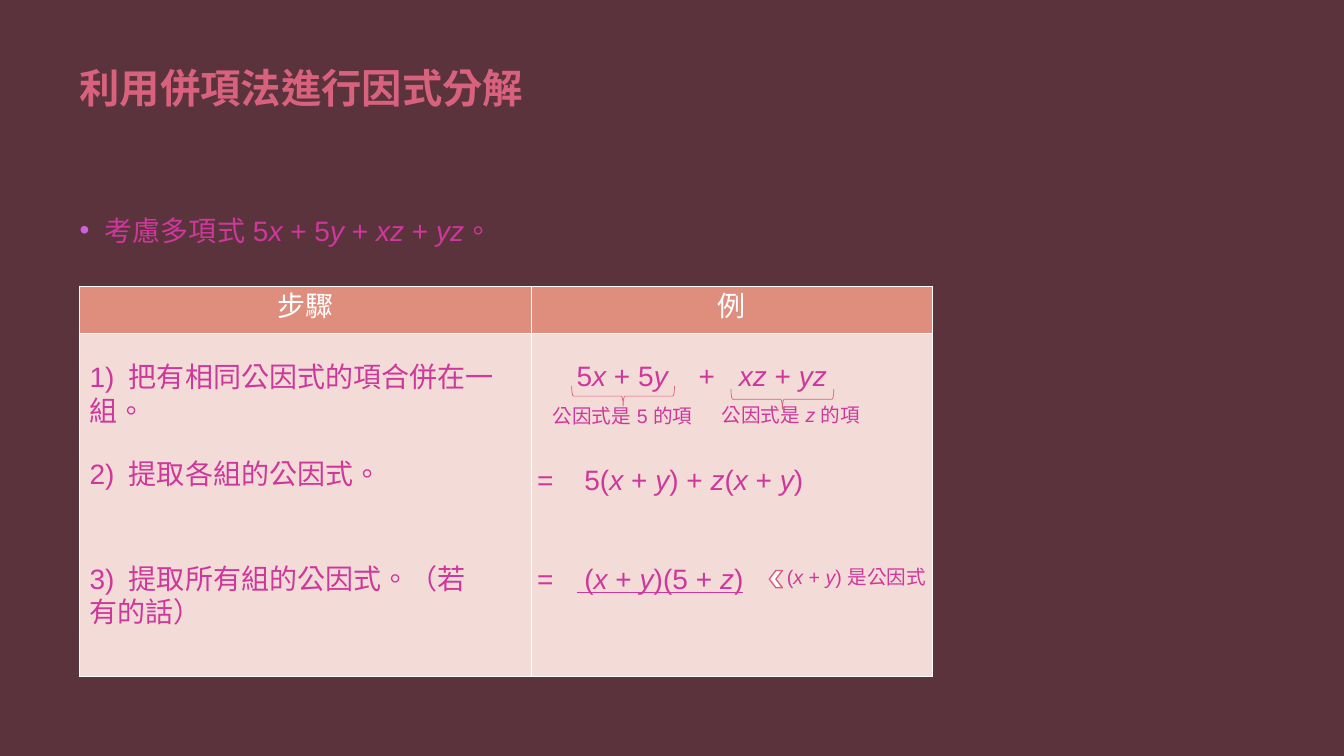
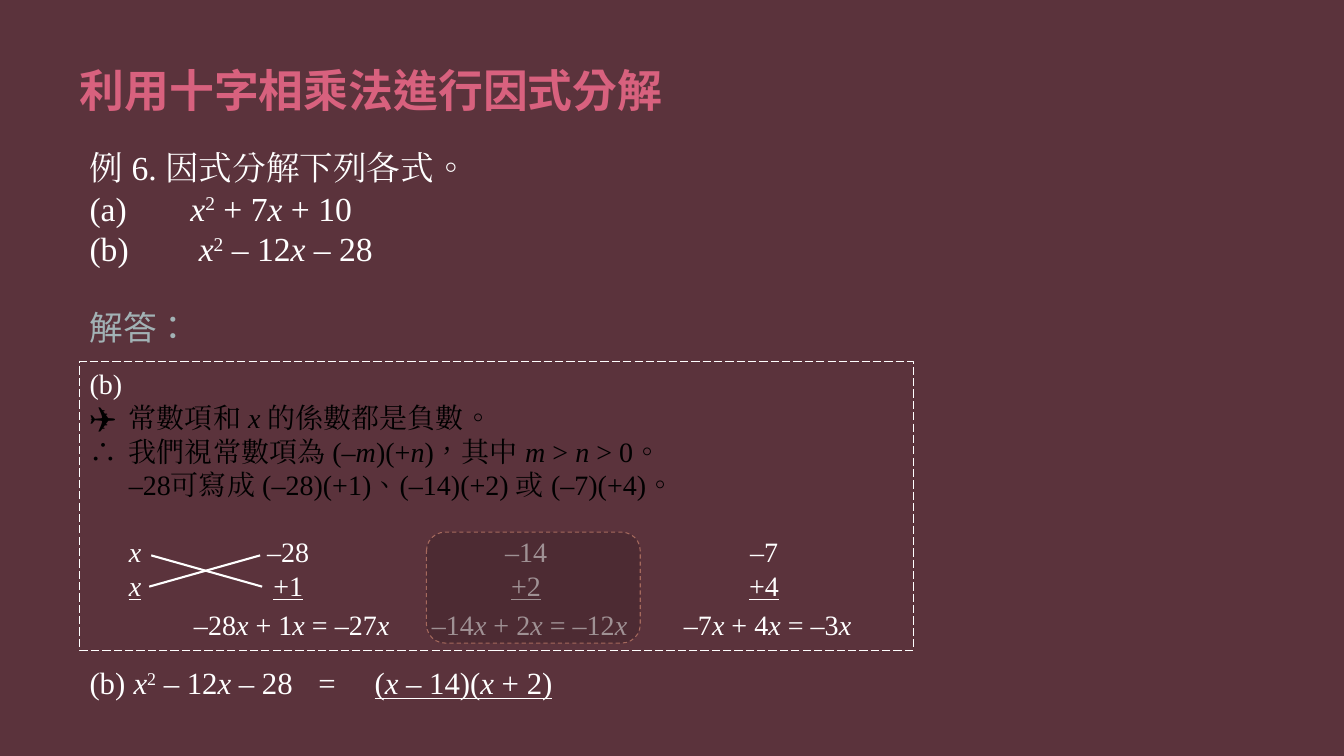
import dataclasses
import itertools

import pptx
import pptx.dml.color
import pptx.enum.dml
import pptx.enum.shapes
import pptx.enum.text
import pptx.oxml
import pptx.oxml.ns
import pptx.util

Inches = pptx.util.Inches
Pt = pptx.util.Pt
RGB = pptx.dml.color.RGBColor.from_string
Align = pptx.enum.text.PP_ALIGN
Anchor = pptx.enum.text.MSO_ANCHOR
Shape = pptx.enum.shapes.MSO_SHAPE
Dash = pptx.enum.dml.MSO_LINE
qn = pptx.oxml.ns.qn


@dataclasses.dataclass(frozen=True)
class Theme:
    background: str = "5B333C"
    dark: str = "41242B"
    rose: str = "D8617E"
    bullet: str = "CE61D8"
    magenta: str = "CE389B"
    white: str = "FFFFFF"
    black: str = "000000"
    gray: str = "A2B2B5"
    header: str = "DF8E7E"
    cell: str = "F3DBD8"
    highlight: str = "A5695D"
    heading_font: str = "Noto Sans CJK TC"
    sans: str = "Arial"
    serif: str = "Times New Roman"
    label_font: str = "Lato"
    note: float = 14
    body: float = 20
    answer: float = 22
    question: float = 24


theme = Theme()
left = 0.79


def write(paragraph, text, size, color, font, underline=False, tabs=()):
    if tabs:
        tab_list = pptx.oxml.ns.qn("a:tabLst")
        properties = paragraph._p.get_or_add_pPr()
        stops = properties.makeelement(tab_list, {})
        properties.append(stops)
        for position, alignment in tabs:
            stop = stops.makeelement(qn("a:tab"), {"pos": str(Inches(position)), "algn": alignment})
            stops.append(stop)
    kinds = {"x": "variable", "y": "variable", "z": "variable", "m": "variable", "n": "variable", "²": "power"}
    for kind, letters in itertools.groupby(text, lambda letter: kinds.get(letter, "plain")):
        run = paragraph.add_run()
        run.text = "2" if kind == "power" else "".join(letters)
        run.font.size = Pt(size)
        run.font.color.rgb = RGB(color)
        run.font.name = font
        run.font.italic = kind == "variable"
        run.font.underline = underline
        properties = run._r.get_or_add_rPr()
        properties.set("lang", "zh-TW")
        properties.append(properties.makeelement(qn("a:ea"), {"typeface": font}))
        if kind == "power":
            properties.set("baseline", "30000")


def add_box(slide, box, wrap=True):
    frame = slide.shapes.add_textbox(*map(Inches, box)).text_frame
    frame.word_wrap = wrap
    return frame


presentation = pptx.Presentation()
presentation.slide_width = Inches(13.33)
presentation.slide_height = Inches(7.5)
master_fill = presentation.slide_master.background.fill
master_fill.solid()
master_fill.fore_color.rgb = RGB(theme.background)

slides = []
for title_text, title_size in [("利用併項法進行因式分解", 28.8), ("利用十字相乘法進行因式分解", 32)]:
    slide = presentation.slides.add_slide(presentation.slide_layouts[5])
    title = slide.shapes.title
    title.left, title.top, title.width, title.height = map(Inches, (left, 0.68, 11.73, 0.73))
    frame = title.text_frame
    frame.margin_left = frame.margin_top = frame.margin_right = frame.margin_bottom = 0
    frame.vertical_anchor = Anchor.TOP
    frame.word_wrap = True
    paragraph = frame.paragraphs[0]
    paragraph.alignment = Align.LEFT
    paragraph.line_spacing = 0.9
    write(paragraph, title_text, title_size, theme.rose, theme.heading_font)
    for run in paragraph.runs:
        run.font.bold = True
    slides.append(slide)
grouping, cross = slides

frame = add_box(grouping, (left, 2.05, 11.73, 0.5))
frame.margin_left = frame.margin_top = frame.margin_right = frame.margin_bottom = 0
paragraph = frame.paragraphs[0]
properties = paragraph._p.get_or_add_pPr()
properties.set("marL", str(Inches(0.25)))
properties.set("indent", str(Inches(-0.25)))
namespace = pptx.oxml.ns.nsdecls("a")
for bullet in (
    f'<a:buClr {namespace}><a:srgbClr val="{theme.bullet}"/></a:buClr>',
    f'<a:buFont {namespace} typeface="{theme.sans}"/>',
    f'<a:buChar {namespace} char="•"/>',
):
    properties.append(pptx.oxml.parse_xml(bullet))
paragraph.line_spacing = 1.2
write(paragraph, "考慮多項式 5x + 5y + xz + yz。", theme.body, theme.magenta, theme.sans)

table = grouping.shapes.add_table(2, 2, *map(Inches, (left, 2.84, 8.46, 3.87))).table
table.first_row = False
table.horz_banding = False
for column, width in zip(table.columns, (4.48, 3.98)):
    column.width = Inches(width)
for row, height, fill in zip(table.rows, (0.47, 3.4), (theme.header, theme.cell)):
    row.height = Inches(height)
    for cell in row.cells:
        for side in ("lnL", "lnR", "lnT", "lnB"):
            cell._tc.get_or_add_tcPr().append(pptx.oxml.parse_xml(
                f'<a:{side} {namespace} w="{Pt(1)}"><a:solidFill>'
                f'<a:srgbClr val="{theme.white}"/></a:solidFill></a:{side}>'))
        cell.fill.solid()
        cell.fill.fore_color.rgb = RGB(fill)
for cell, heading in zip(table.rows[0].cells, ("步驟", "例")):
    paragraph = cell.text_frame.paragraphs[0]
    paragraph.alignment = Align.CENTER
    write(paragraph, heading, theme.body, theme.white, theme.sans)

step_tabs = [(0.39, "l")]
sum_tabs = step_tabs + [(1.6, "l"), (2, "l")]
working = [
    ((left, 3.52, 4.45, 0.77), "1)\t把有相同公因式的項合併在一組。", "", step_tabs),
    ((left, 4.48, 4.02, 0.44), "2)\t提取各組的公因式。", "", step_tabs),
    ((left, 5.52, 4.02, 0.77), "3)\t提取所有組的公因式。（若有的話）", "", step_tabs),
    ((5.23, 3.51, 3.08, 0.44), "\t5x + 5y\t+\txz + yz", "", sum_tabs),
    ((5.23, 4.54, 3.37, 0.44), "=\t 5(x + y) + z(x + y)", "", step_tabs),
    ((5.23, 5.52, 2.59, 0.44), "=\t", " (x + y)(5 + z)", step_tabs),
]
for box, text, result, tabs in working:
    paragraph = add_box(grouping, box).paragraphs[0]
    write(paragraph, text, theme.body, theme.magenta, theme.sans, tabs=tabs)
    write(paragraph, result, theme.body, theme.magenta, theme.sans, underline=True)

notes = [
    ((5.34, 3.96, 1.67, 0.34), "公因式是 5 的項"),
    ((7.01, 3.95, 1.67, 0.34), "公因式是 z 的項"),
    ((7.66, 5.56, 1.67, 0.34), "(x + y) 是公因式"),
]
for box, text in notes:
    paragraph = add_box(grouping, box).paragraphs[0]
    paragraph.alignment = Align.CENTER
    write(paragraph, text, theme.note, theme.magenta, theme.sans)

marks = [
    (Shape.LEFT_BRACE, (6.08, 3.42, 0.2, 1.02), 270, 0.5),
    (Shape.LEFT_BRACE, (7.66, 3.45, 0.2, 1.02), 270, 0.5),
    (Shape.CHEVRON, (7.63, 5.66, 0.13, 0.17), 180, 1),
]
for preset, box, rotation, line_width in marks:
    mark = grouping.shapes.add_shape(preset, *map(Inches, box))
    mark.shadow.inherit = False
    mark.rotation = rotation
    mark.line.color.rgb = RGB(theme.rose)
    mark.line.width = Pt(line_width)
    if preset == Shape.CHEVRON:
        mark.fill.solid()
        mark.fill.fore_color.rgb = RGB(theme.white)
    else:
        mark.fill.background()

frame = add_box(cross, (left, 1.41, 6.67, 1.31))
for index, text in enumerate(("例 6. 因式分解下列各式。", "(a)\tx² + 7x + 10", "(b)\t x² – 12x – 28")):
    paragraph = frame.add_paragraph() if index else frame.paragraphs[0]
    write(paragraph, text, theme.question, theme.white, theme.serif, tabs=[(1, "l")])

paragraph = add_box(cross, (left, 3, 1.3, 0.5), wrap=False).paragraphs[0]
write(paragraph, "解答：", theme.question, theme.gray, theme.label_font)

paragraph = add_box(cross, (left, 6.54, 5.5, 0.5)).paragraphs[0]
answer_tabs = [(0.36, "l"), (2.27, "l"), (2.75, "l")]
write(paragraph, "(b)\t x² – 12x – 28\t=\t ", theme.answer, theme.white, theme.serif, tabs=answer_tabs)
write(paragraph, "(x – 14)(x + 2)", theme.answer, theme.white, theme.serif, underline=True)

panel = cross.shapes.add_shape(Shape.RECTANGLE, *map(Inches, (left, 3.59, 8.27, 2.86)))
panel.shadow.inherit = False
panel.fill.background()
panel.line.color.rgb = RGB(theme.white)
panel.line.width = Pt(0.75)
panel.line.dash_style = Dash.LONG_DASH
frame = panel.text_frame
frame.word_wrap = True
frame.vertical_anchor = Anchor.TOP
panel_tabs = [(0.39, "l"), (1.97, "ctr"), (4.33, "ctr"), (6.69, "ctr")]
panel_lines = [
    ("(b)", theme.white, False, 0),
    ("✈\t常數項和 x 的係數都是負數。", theme.black, False, 0),
    ("∴\t我們視常數項為 (–m)(+n)，其中 m > n > 0。", theme.black, False, 0),
    ("\t–28可寫成 (–28)(+1)、(–14)(+2) 或 (–7)(+4)。", theme.black, False, 0),
    ("\tx\t–28\t–14\t–7", theme.white, False, 24),
    ("\tx\t+1\t+2\t+4", theme.white, True, 0),
    ("\t\t –28x + 1x = –27x\t –14x + 2x = –12x\t –7x + 4x = –3x", theme.white, False, 4),
]
for index, (text, color, underline, gap) in enumerate(panel_lines):
    paragraph = frame.add_paragraph() if index else frame.paragraphs[0]
    paragraph.alignment = Align.LEFT
    if gap:
        paragraph.space_before = Pt(gap)
    for position, part in enumerate(text.split("\t")):
        if position:
            write(paragraph, "\t", theme.body, color, theme.serif)
        write(paragraph, part, theme.body, color, theme.serif, underline, () if position else panel_tabs)

highlight = cross.shapes.add_shape(Shape.ROUNDED_RECTANGLE, *map(Inches, (4.23, 5.28, 2.12, 1.1)))
highlight.shadow.inherit = False
highlight.fill.solid()
highlight.fill.fore_color.rgb = RGB(theme.dark)
fill_color = highlight._element.spPr.find(qn("a:solidFill"))[0]
fill_color.append(fill_color.makeelement(qn("a:alpha"), {"val": "50000"}))
highlight.line.color.rgb = RGB(theme.highlight)
highlight.line.width = Pt(0.75)
highlight.line.dash_style = Dash.DASH

for ends in ((1.5, 5.51, 2.6, 5.82), (1.48, 5.82, 2.58, 5.51)):
    line = cross.shapes.add_connector(pptx.enum.shapes.MSO_CONNECTOR.STRAIGHT, *map(Inches, ends))
    line.line.color.rgb = RGB(theme.white)
    line.line.width = Pt(1.5)
    line_properties = line._element.spPr
    line_properties.append(line_properties.makeelement(qn("a:effectLst"), {}))

presentation.save("out.pptx")
